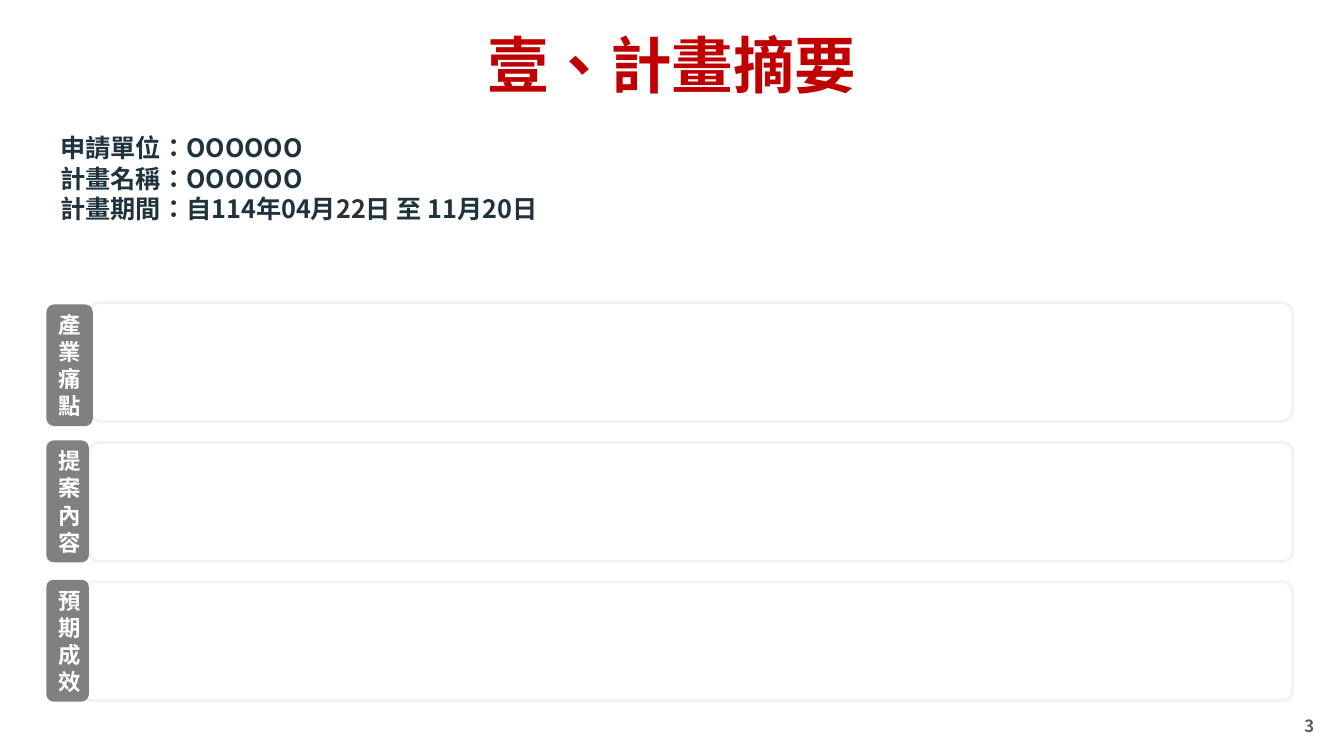
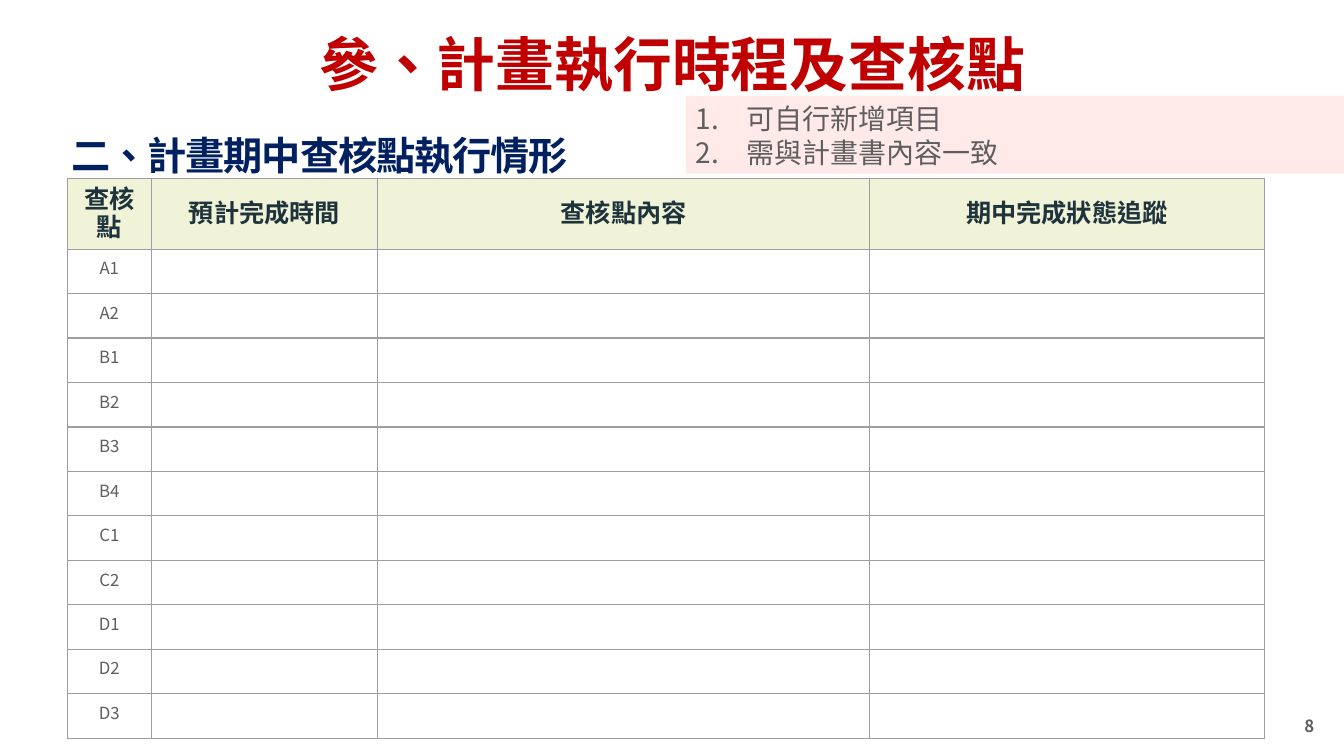
from pptx import Presentation
from pptx.dml.color import RGBColor
from pptx.enum.lang import MSO_LANGUAGE_ID
from pptx.enum.shapes import MSO_SHAPE
from pptx.enum.text import MSO_ANCHOR, PP_ALIGN
from pptx.oxml.ns import qn
from pptx.util import Cm, Pt
from lxml import etree

LANGUAGE = MSO_LANGUAGE_ID.TRADITIONAL_CHINESE
RECTANGLE = MSO_SHAPE.RECTANGLE
ROUNDED = MSO_SHAPE.ROUNDED_RECTANGLE
TOP, MIDDLE, BOTTOM = MSO_ANCHOR.TOP, MSO_ANCHOR.MIDDLE, MSO_ANCHOR.BOTTOM
LEFT, CENTER = PP_ALIGN.LEFT, PP_ALIGN.CENTER

FONT = "Noto Sans CJK SC"
COLORS = {
    "title": "C00000", "subtitle": "002060", "ink": "1F333D", "date": "2F2F2F",
    "gray": "5E5E5E", "label": "808080", "frame": "F2F2F2", "white": "FFFFFF",
    "header": "F0F3D8", "note": "FFEAE9", "border": "9E9E9E",
}
COLORS = {name: RGBColor.from_string(code) for name, code in COLORS.items()}
LINE_HEIGHT = 1.21


def style(para, size, color, bold=False, align=CENTER, name=FONT, line=None):
    """Set the alignment, line height and font of a whole paragraph."""
    para.alignment = align
    if line:
        para.line_spacing = Pt(line)
    font = para.font
    font.size, font.bold, font.name = Pt(size), bold, name
    font.color.rgb = COLORS[color]
    font.language_id = LANGUAGE
    east_asian = etree.SubElement(para._p.pPr.find(qn("a:defRPr")), qn("a:ea"))
    east_asian.set("typeface", name)


def add_box(page, left, top, width, height, inset, anchor=TOP, wrap=True):
    """Add a text box and return its text frame."""
    frame = page.shapes.add_textbox(Cm(left), Cm(top), Cm(width), Cm(height)).text_frame
    frame.word_wrap = wrap
    frame.vertical_anchor = anchor
    frame.margin_left = frame.margin_right = Cm(inset)
    frame.margin_top = frame.margin_bottom = Cm(min(inset, 0.15))
    return frame


deck = Presentation()
deck.slide_width, deck.slide_height = Cm(33.87), Cm(19.05)

# Shared title and page number
pages = []
for title, size, number in (("壹、計畫摘要", 44, "3"), ("參、計畫執行時程及查核點", 42, "8")):
    page = deck.slides.add_slide(deck.slide_layouts[6])
    pages.append(page)
    para = add_box(page, 0, 0.6, 33.87, 2, 0.15, MIDDLE).paragraphs[0]
    para.text = title
    style(para, size, "title", bold=True)
    para = add_box(page, 32.59, 17.91, 0.81, 0.79, 0.15, BOTTOM, wrap=False).paragraphs[0]
    para.text = number
    style(para, 12, "gray", bold=True)
summary, schedule = pages

# Summary: frames with vertical labels
sections = (
    # label, label top, label width, frame left, frame top, corner
    ("產業痛點", 7.67, 1.17, 2.24, 7.62, 0.1),
    ("提案內容", 11.1, 1.07, 2.24, 11.15, 0.08),
    ("預期成效", 14.61, 1.07, 2.08, 14.66, 0.09),
)
for text, label_top, label_width, frame_left, frame_top, corner in sections:
    frame = summary.shapes.add_shape(ROUNDED, Cm(frame_left), Cm(frame_top),
                                     Cm(32.58 - frame_left), Cm(3))
    frame.shadow.inherit = False
    frame.adjustments[0] = corner
    frame.fill.solid()
    frame.fill.fore_color.rgb = COLORS["white"]
    frame.line.color.rgb = COLORS["frame"]
    frame.line.width = Pt(2)

    label = summary.shapes.add_shape(ROUNDED, Cm(1.17), Cm(label_top), Cm(label_width), Cm(3.07))
    label.shadow.inherit = False
    label.fill.solid()
    label.fill.fore_color.rgb = COLORS["label"]
    label.line.fill.background()
    label.text_frame.word_wrap = True
    label.text_frame.vertical_anchor = MIDDLE
    para = label.text_frame.paragraphs[0]
    para.text = text
    style(para, 16, "white", bold=True, line=16 * LINE_HEIGHT)

# Summary: project details
details = add_box(summary, 1.27, 3.18, 31.42, 2.57, 0.25)
lines = (
    ["申請單位：OOOOOO"],
    ["計畫名稱：OOOOOO"],
    ["計畫期間：自114年04月", "22", "日 至 11月20日"],
)
for index, parts in enumerate(lines):
    para = details.add_paragraph() if index else details.paragraphs[0]
    style(para, 18, "ink", bold=True, align=LEFT, line=18 * LINE_HEIGHT)
    for part in parts:
        span = para.add_run()
        span.text = part
        if part == "22":
            span.font.color.rgb = COLORS["date"]

# Schedule: subtitle
para = add_box(schedule, 1.68, 2.49, 30.5, 2.08, 0.13).paragraphs[0]
para.text = "二、計畫期中查核點執行情形"
style(para, 28, "subtitle", bold=True, align=LEFT, line=53)
para._p.pPr.find(qn("a:defRPr")).set("spc", "-80")

# Schedule: checkpoint table
headers = ("查核點", "預計完成時間", "查核點內容", "期中完成狀態追蹤")
checkpoints = ("A1", "A2", "B1", "B2", "B3", "B4", "C1", "C2", "D1", "D2", "D3")
widths = (2.11, 5.71, 12.39, 9.95)
rows = [headers] + [(checkpoint, "", "", "") for checkpoint in checkpoints]
table = schedule.shapes.add_table(len(rows), len(widths), Cm(1.7), Cm(4.5), Cm(sum(widths)),
                                  Cm(1.12 * len(rows))).table
table.first_row = table.horz_banding = False
for column, width in zip(table.columns, widths):
    column.width = Cm(width)
for row_index, texts in enumerate(rows):
    table.rows[row_index].height = Cm(1.12)
    for column_index, text in enumerate(texts):
        cell = table.cell(row_index, column_index)
        for side in ("a:lnL", "a:lnR", "a:lnT", "a:lnB"):
            border = etree.SubElement(cell._tc.get_or_add_tcPr(), qn(side), w=str(Pt(1)))
            fill = etree.SubElement(border, qn("a:solidFill"))
            etree.SubElement(fill, qn("a:srgbClr"), val=str(COLORS["border"]))
        cell.fill.solid()
        cell.fill.fore_color.rgb = COLORS["white" if row_index else "header"]
        cell.vertical_anchor = MIDDLE
        para = cell.text_frame.paragraphs[0]
        para.text = text
        if row_index:
            style(para, 12, "gray", line=12)
        else:
            style(para, 18, "ink", bold=True, name="Arial")

# Schedule: numbered note
note = schedule.shapes.add_shape(RECTANGLE, Cm(17.29), Cm(2.42), Cm(16.58), Cm(1.96))
note.shadow.inherit = False
note.fill.solid()
note.fill.fore_color.rgb = COLORS["note"]
note.line.fill.background()
note.text_frame.word_wrap = True
note.text_frame.vertical_anchor = MIDDLE
for index, text in enumerate(("可自行新增項目", "需與計畫書內容一致")):
    para = note.text_frame.add_paragraph() if index else note.text_frame.paragraphs[0]
    para.text = text
    properties = para._p.get_or_add_pPr()
    properties.set("marL", str(Cm(1.27)))
    properties.set("indent", str(-Cm(1.27)))
    etree.SubElement(properties, qn("a:buFont"), typeface=FONT)
    etree.SubElement(properties, qn("a:buAutoNum"), type="arabicPeriod")
    style(para, 20, "gray", align=LEFT, line=20 * LINE_HEIGHT)

deck.save("out.pptx")
